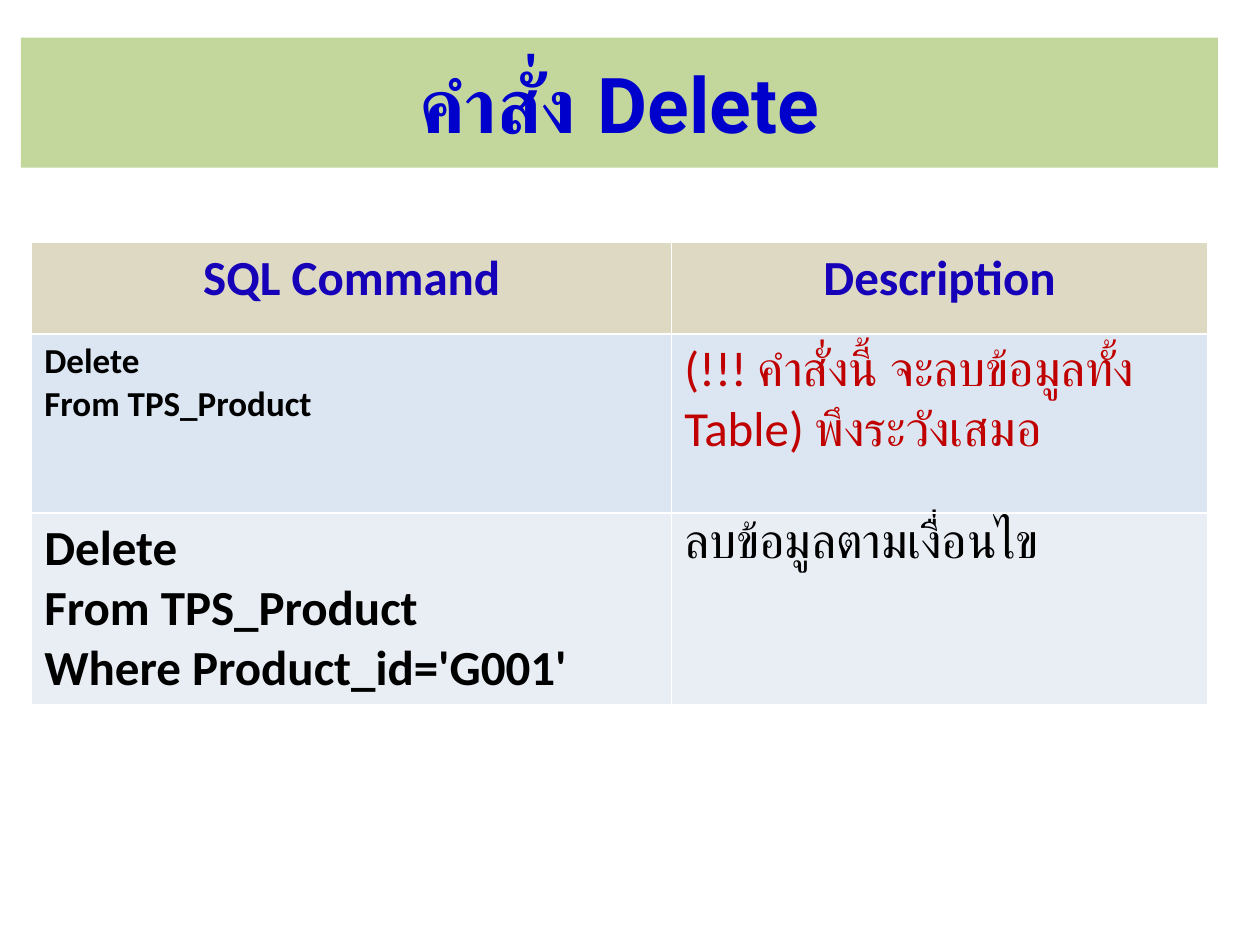
import pptx
import pptx.util
import pptx.dml.color
import pptx.enum.text

Cm, Pt = pptx.util.Cm, pptx.util.Pt
PP_ALIGN = pptx.enum.text.PP_ALIGN

COLORS = {
    "banner": "C3D69B", "title": "0000CC",
    "header_fill": "DDD9C3", "header": "1600B8",
    "warning_fill": "DCE6F2", "warning": "C00000",
    "filter_fill": "E9EDF4", "text": "000000",
}

TITLE = "คำสั่ง Delete"
COLUMN_WIDTHS = (12.9, 10.8)
# Row: height in cm, fill, alignment, cells of (text, size, font, colour, bold)
ROWS = [
    (1.85, "header_fill", PP_ALIGN.CENTER, [
        ("SQL Command", 28, "Calibri", "header", True),
        ("Description", 28, "Calibri", "header", True),
    ]),
    (3.61, "warning_fill", PP_ALIGN.LEFT, [
        ("Delete\nFrom TPS_Product", 20, "Calibri", "text", True),
        ("(!!! คำสั่งนี้ จะลบข้อมูลทั้ง Table) พึงระวังเสมอ",
         28, "Calibri", "warning", False),
    ]),
    (3.73, "filter_fill", PP_ALIGN.LEFT, [
        ("Delete\nFrom TPS_Product\nWhere Product_id='G001'",
         28, "Calibri", "text", True),
        ("ลบข้อมูลตามเงื่อนไข", 28, "Roboto", "text", False),
    ]),
]


def rgb(name):
    return pptx.dml.color.RGBColor.from_string(COLORS[name])


def paint(obj, name):
    obj.fill.solid()
    obj.fill.fore_color.rgb = rgb(name)


def write(tf, text, size, font, color, bold, align):
    """Fill a text frame, one paragraph per line of text."""
    tf.text = text
    for p in tf.paragraphs:
        p.alignment = align
        p.font.size = Pt(size)
        p.font.name = font
        p.font.bold = bold
        p.font.color.rgb = rgb(color)


def add_title(s):
    sp = s.shapes.title
    sp.left, sp.top, sp.width, sp.height = Cm(0.42), Cm(0.76), Cm(24.13), Cm(2.62)
    paint(sp, "banner")
    sp.text_frame.vertical_anchor = pptx.enum.text.MSO_ANCHOR.MIDDLE
    write(sp.text_frame, TITLE, 44, "Roboto", "title", True, PP_ALIGN.CENTER)


def add_command_table(s):
    table = s.shapes.add_table(
        len(ROWS), len(COLUMN_WIDTHS), Cm(0.64), Cm(4.88),
        Cm(sum(COLUMN_WIDTHS)), Cm(sum(row[0] for row in ROWS))).table
    for column, width in zip(table.columns, COLUMN_WIDTHS):
        column.width = Cm(width)
    for row, (height, fill, align, cells) in zip(table.rows, ROWS):
        row.height = Cm(height)
        for cell, content in zip(row.cells, cells):
            paint(cell, fill)
            write(cell.text_frame, *content, align)


def main():
    prs = pptx.Presentation()
    prs.slide_width, prs.slide_height = Cm(25.4), Cm(19.05)
    s = prs.slides.add_slide(prs.slide_layouts[5])
    add_title(s)
    add_command_table(s)
    prs.save("out.pptx")


if __name__ == "__main__":
    main()
